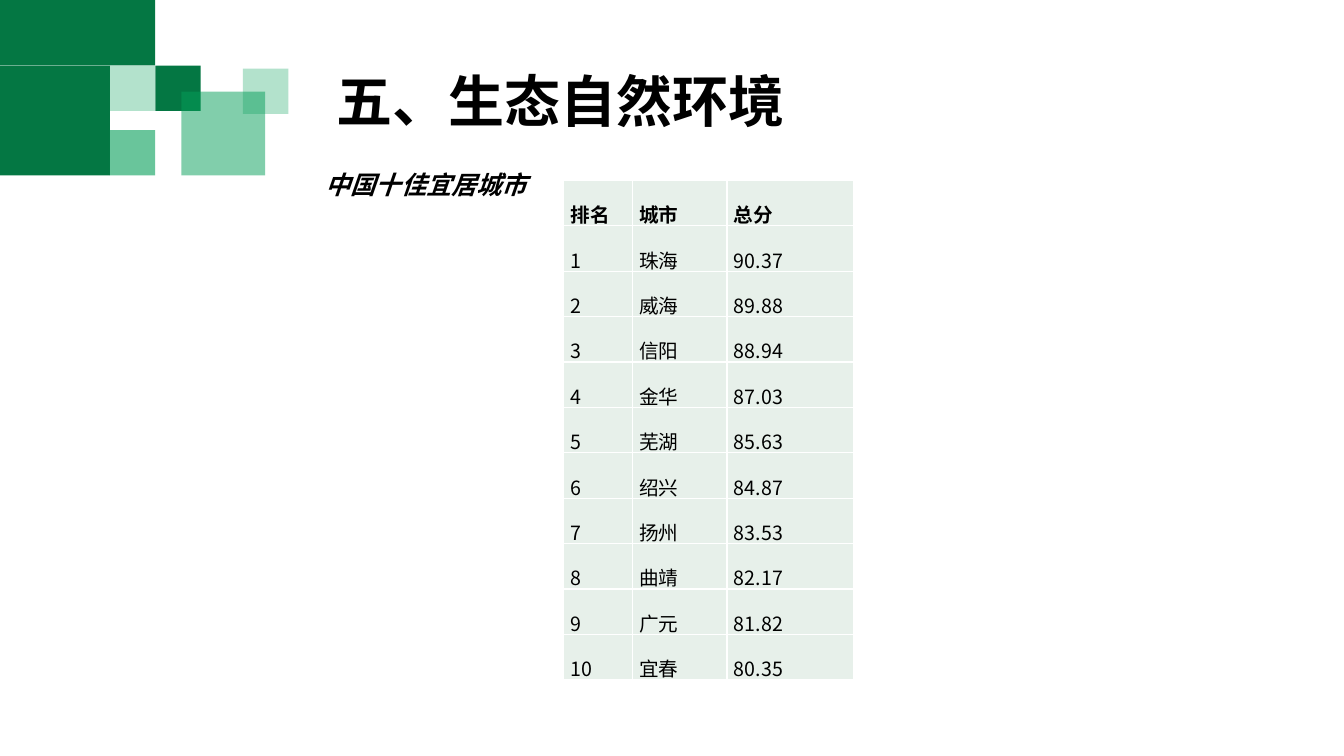
"""Builds the slide on the ten most liveable cities of China."""
from typing import NamedTuple

from lxml.etree import SubElement
from pptx import Presentation
from pptx.dml.color import RGBColor
from pptx.enum.shapes import MSO_SHAPE
from pptx.enum.text import MSO_ANCHOR, MSO_AUTO_SIZE, PP_ALIGN
from pptx.oxml.ns import qn
from pptx.slide import Slide
from pptx.table import _Cell
from pptx.text.text import _Paragraph
from pptx.util import Inches, Pt

DARK_GREEN = RGBColor(0x04, 0x77, 0x43)
GREEN = RGBColor(0x05, 0x9F, 0x59)
PALE_GREEN = RGBColor(0xE7, 0xF0, 0xEA)
WHITE = RGBColor(0xFF, 0xFF, 0xFF)
BLACK = RGBColor(0, 0, 0)
LATIN_FONT = "Calibri"
CHINESE_FONT = "Noto Sans CJK SC"
HEADER = ("排名", "城市", "总分")
COLUMN_WIDTHS = (0.68, 0.94, 1.26)
ROW_HEIGHT = 0.22


class Block(NamedTuple):
    left: float
    top: float
    width: float
    height: float
    color: RGBColor
    opacity: int = 100


class Heading(NamedTuple):
    text: str
    left: float
    top: float
    width: float
    height: float
    size: int
    italic: bool = False
    line_spacing: float = 1.0
    space_before: int = 0


class City(NamedTuple):
    name: str
    score: str


BLOCKS = (
    Block(0, 0.65, 1.09, 1.09, DARK_GREEN),
    Block(0, 0, 1.54, 0.65, DARK_GREEN),
    Block(1.09, 0.65, 0.45, 0.45, GREEN, 30),
    Block(1.54, 0.65, 0.45, 0.45, DARK_GREEN),
    Block(1.09, 1.29, 0.45, 0.45, GREEN, 60),
    Block(1.8, 0.91, 0.83, 0.83, GREEN, 50),
    Block(2.41, 0.68, 0.45, 0.45, GREEN, 30),
)
HEADINGS = (
    Heading("五、生态自然环境", 3.24, 0.69, 5.98, 0.71, 40,
            line_spacing=0.9, space_before=10),
    Heading("中国十佳宜居城市", 3.13, 1.63, 9.11, 0.94, 18, italic=True),
)
CITIES = (
    City("珠海", "90.37"),
    City("威海", "89.88"),
    City("信阳", "88.94"),
    City("金华", "87.03"),
    City("芜湖", "85.63"),
    City("绍兴", "84.87"),
    City("扬州", "83.53"),
    City("曲靖", "82.17"),
    City("广元", "81.82"),
    City("宜春", "80.35"),
)


def add_span(para: _Paragraph, text: str, size: int, font: str,
             bold: bool, italic: bool = False) -> None:
    """Add one run of black text."""
    span = para.add_run()
    span.text = text
    span.font.size = Pt(size)
    span.font.name = font
    span.font.bold = bold
    span.font.italic = italic
    span.font.color.rgb = BLACK
    SubElement(span.font._element, qn("a:ea"), typeface=CHINESE_FONT)


def add_block(page: Slide, block: Block) -> None:
    """Draw one green rectangle of the corner ornament."""
    shape = page.shapes.add_shape(
        MSO_SHAPE.RECTANGLE, Inches(block.left), Inches(block.top),
        Inches(block.width), Inches(block.height))
    shape.shadow.inherit = False
    shape.line.fill.background()
    shape.fill.solid()
    shape.fill.fore_color.rgb = block.color
    if block.opacity < 100:
        color = shape._element.spPr.find(qn("a:solidFill"))[0]
        SubElement(color, qn("a:alpha"), val=str(block.opacity * 1000))


def add_heading(page: Slide, heading: Heading) -> None:
    """Add a bold heading in a text box."""
    box = page.shapes.add_textbox(
        Inches(heading.left), Inches(heading.top),
        Inches(heading.width), Inches(heading.height))
    frame = box.text_frame
    frame.word_wrap = True
    frame.auto_size = MSO_AUTO_SIZE.SHAPE_TO_FIT_TEXT
    para = frame.paragraphs[0]
    para.line_spacing = heading.line_spacing
    para.space_before = Pt(heading.space_before)
    add_span(para, heading.text, heading.size, LATIN_FONT, True, heading.italic)


def fill_cell(cell: _Cell, text: str, bold: bool) -> None:
    """Write a cell and give it its fill and white borders."""
    cell.margin_left = cell.margin_right = Inches(0.07)
    cell.margin_top = cell.margin_bottom = Inches(0.05)
    cell.vertical_anchor = MSO_ANCHOR.TOP
    properties = cell._tc.get_or_add_tcPr()
    for side in ("a:lnL", "a:lnR", "a:lnT", "a:lnB"):
        border = SubElement(properties, qn(side), w=str(Pt(1)))
        paint = SubElement(border, qn("a:solidFill"))
        SubElement(paint, qn("a:srgbClr"), val=str(WHITE))
    cell.fill.solid()
    cell.fill.fore_color.rgb = PALE_GREEN
    para = cell.text_frame.paragraphs[0]
    para.alignment = PP_ALIGN.JUSTIFY
    para.line_spacing = 1.5
    add_span(para, text, 14, CHINESE_FONT, bold)


def add_ranking(page: Slide) -> None:
    """Add the table of ranked cities."""
    rows = [HEADER] + [(str(rank), city.name, city.score)
                       for rank, city in enumerate(CITIES, 1)]
    table = page.shapes.add_table(
        len(rows), len(HEADER), Inches(5.59), Inches(1.79),
        Inches(sum(COLUMN_WIDTHS)), Inches(ROW_HEIGHT * len(rows))).table
    for column, width in zip(table.columns, COLUMN_WIDTHS):
        column.width = Inches(width)
    for row_index, row in enumerate(rows):
        for column_index, text in enumerate(row):
            fill_cell(table.cell(row_index, column_index), text, row_index == 0)


def main() -> None:
    """Build the deck and save it."""
    deck = Presentation()
    deck.slide_width = Inches(13.33)
    deck.slide_height = Inches(7.5)
    page = deck.slides.add_slide(deck.slide_layouts[6])
    for block in BLOCKS:
        add_block(page, block)
    for heading in HEADINGS:
        add_heading(page, heading)
    add_ranking(page)
    deck.save("out.pptx")


if __name__ == "__main__":
    main()
